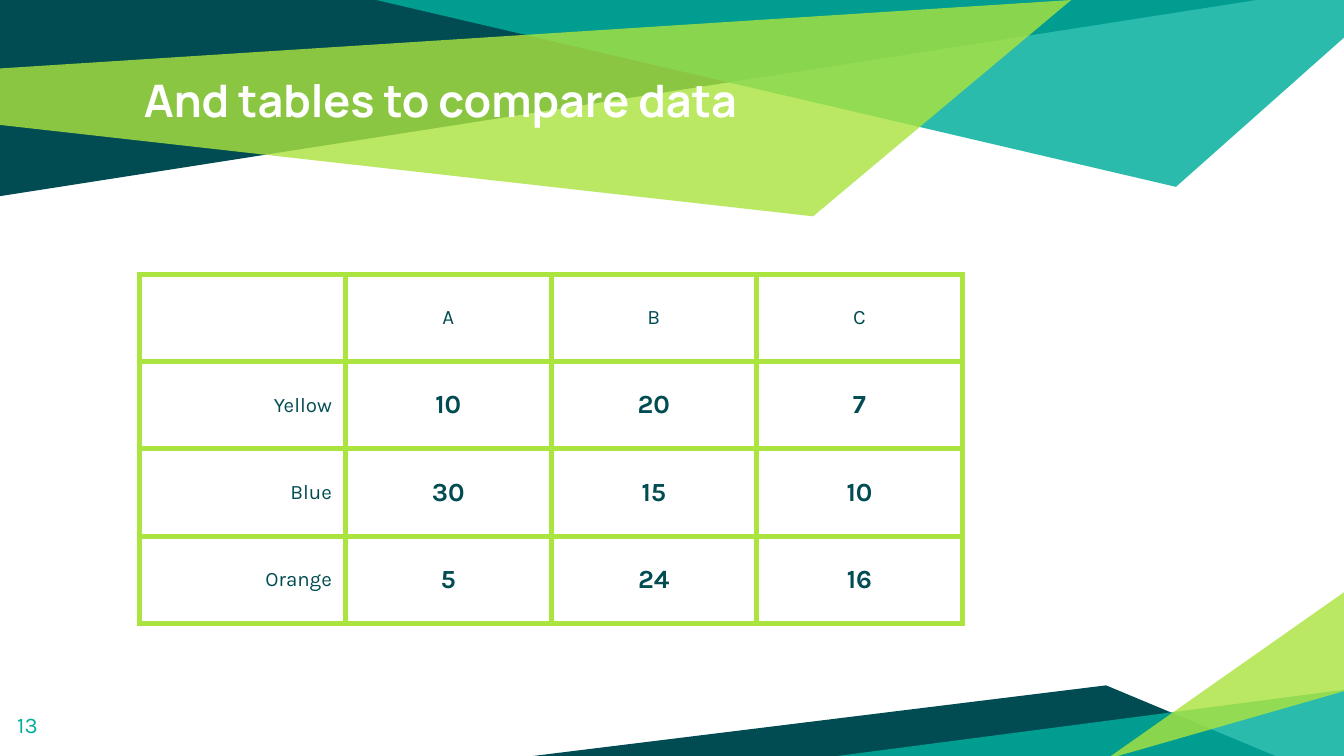
from dataclasses import dataclass

from lxml import etree
from pptx import Presentation
from pptx.dml.color import RGBColor
from pptx.enum.text import MSO_ANCHOR, PP_ALIGN
from pptx.oxml.ns import qn
from pptx.util import Inches, Pt

TOP, MIDDLE = MSO_ANCHOR.TOP, MSO_ANCHOR.MIDDLE
LEFT, CENTER, RIGHT = PP_ALIGN.LEFT, PP_ALIGN.CENTER, PP_ALIGN.RIGHT
TITLE_ONLY = 5


@dataclass(frozen=True)
class Theme:
    dark: str = "004C52"
    teal: str = "00AE9D"
    lime: str = "ABE33F"
    white: str = "FFFFFF"
    teal_alpha: int = 83
    lime_alpha: int = 81
    heading_font: str = "Manrope"
    body_font: str = "Karla"
    title_size: int = 24
    value_size: int = 14
    label_size: int = 11
    number_size: int = 12
    border_width: int = 3


THEME = Theme()

BANDS = [
    ([(0, 0), (0, 1.46), (9.35, 0)], THEME.dark, 100),
    ([(2.8, 0), (8.75, 1.39), (10, 0.28), (10, 0)], THEME.teal, THEME.teal_alpha),
    ([(-0.01, 0.51), (0, 0.93), (6.05, 1.61), (7.97, 0)], THEME.lime, THEME.lime_alpha),
    ([(3.93, 5.63), (9.5, 5.63), (8.23, 5.1)], THEME.dark, 100),
    ([(10.02, 5.13), (10.02, 5.65), (6.04, 5.65)], THEME.teal, THEME.teal_alpha),
    ([(10.01, 5.14), (10.01, 4.4), (8.23, 5.65)], THEME.lime, THEME.lime_alpha),
]

ROWS = [
    ["", "A", "B", "C"],
    ["Yellow", "10", "20", "7"],
    ["Blue", "30", "15", "10"],
    ["Orange", "5", "24", "16"],
]


def add_band(slide, points, color, alpha):
    corners = [(Inches(x), Inches(y)) for x, y in points]
    builder = slide.shapes.build_freeform(*corners[0], scale=1.0)
    builder.add_line_segments(corners[1:], close=True)
    band = builder.convert_to_shape()
    band.shadow.inherit = False
    band.line.fill.background()
    band.fill.solid()
    band.fill.fore_color.rgb = RGBColor.from_string(color)
    if alpha < 100:
        tint = band.element.spPr.find(qn("a:solidFill"))[0]
        etree.SubElement(tint, qn("a:alpha"), val=str(alpha * 1000))


def write_text(text_frame, text, font_name, size, color, bold=False, alignment=LEFT):
    text_frame.text = text
    paragraph = text_frame.paragraphs[0]
    paragraph.alignment = alignment
    for run in paragraph.runs:
        run.font.name = font_name
        run.font.size = Pt(size)
        run.font.bold = bold
        run.font.color.rgb = RGBColor.from_string(color)


def set_frame(text_frame):
    text_frame.word_wrap = True
    text_frame.vertical_anchor = TOP
    text_frame.margin_left = text_frame.margin_right = Inches(0.1)
    text_frame.margin_top = text_frame.margin_bottom = Inches(0.1)


def place_title(slide, text):
    title = slide.shapes.title
    title.left, title.top = Inches(0.97), Inches(0.44)
    title.width, title.height = Inches(8.06), Inches(0.94)
    set_frame(title.text_frame)
    write_text(title.text_frame, text, THEME.heading_font, THEME.title_size,
               THEME.white, bold=True)
    title.element.getparent().append(title.element)


def add_page_number(slide, text):
    box = slide.shapes.add_textbox(Inches(0.03), Inches(5.19), Inches(0.6), Inches(0.43))
    set_frame(box.text_frame)
    write_text(box.text_frame, text, THEME.body_font, THEME.number_size, THEME.teal)


def set_borders(cell, color, width):
    properties = cell._tc.get_or_add_tcPr()
    for side in ("a:lnL", "a:lnR", "a:lnT", "a:lnB"):
        line = etree.SubElement(properties, qn(side), w=str(Pt(width)))
        fill = etree.SubElement(line, qn("a:solidFill"))
        etree.SubElement(fill, qn("a:srgbClr"), val=color)


def format_cell(cell, text, is_value, alignment):
    set_borders(cell, THEME.lime, THEME.border_width)
    cell.fill.background()
    cell.vertical_anchor = MIDDLE
    cell.margin_left = cell.margin_right = Inches(0.1)
    cell.margin_top = cell.margin_bottom = Inches(0.07)
    size = THEME.value_size if is_value else THEME.label_size
    write_text(cell.text_frame, text, THEME.body_font, size, THEME.dark,
               bold=is_value, alignment=alignment)


def add_data_table(slide, rows):
    column_count = len(rows[0])
    column_width, row_height = Inches(1.53), Inches(0.65)
    table = slide.shapes.add_table(
        len(rows), column_count, Inches(1.04), Inches(2.04),
        column_width * column_count, row_height * len(rows)).table
    table.first_row = False
    table.horz_banding = False
    for row_index, row in enumerate(rows):
        for column_index, text in enumerate(row):
            format_cell(table.cell(row_index, column_index), text,
                        is_value=row_index > 0 and column_index > 0,
                        alignment=CENTER if column_index else RIGHT)


def main():
    presentation = Presentation()
    presentation.slide_width = Inches(10)
    presentation.slide_height = Inches(10) * 9 // 16
    slide = presentation.slides.add_slide(presentation.slide_layouts[TITLE_ONLY])
    for points, color, alpha in BANDS:
        add_band(slide, points, color, alpha)
    place_title(slide, "And tables to compare data")
    add_data_table(slide, ROWS)
    add_page_number(slide, "13")
    presentation.save("out.pptx")


if __name__ == "__main__":
    main()
